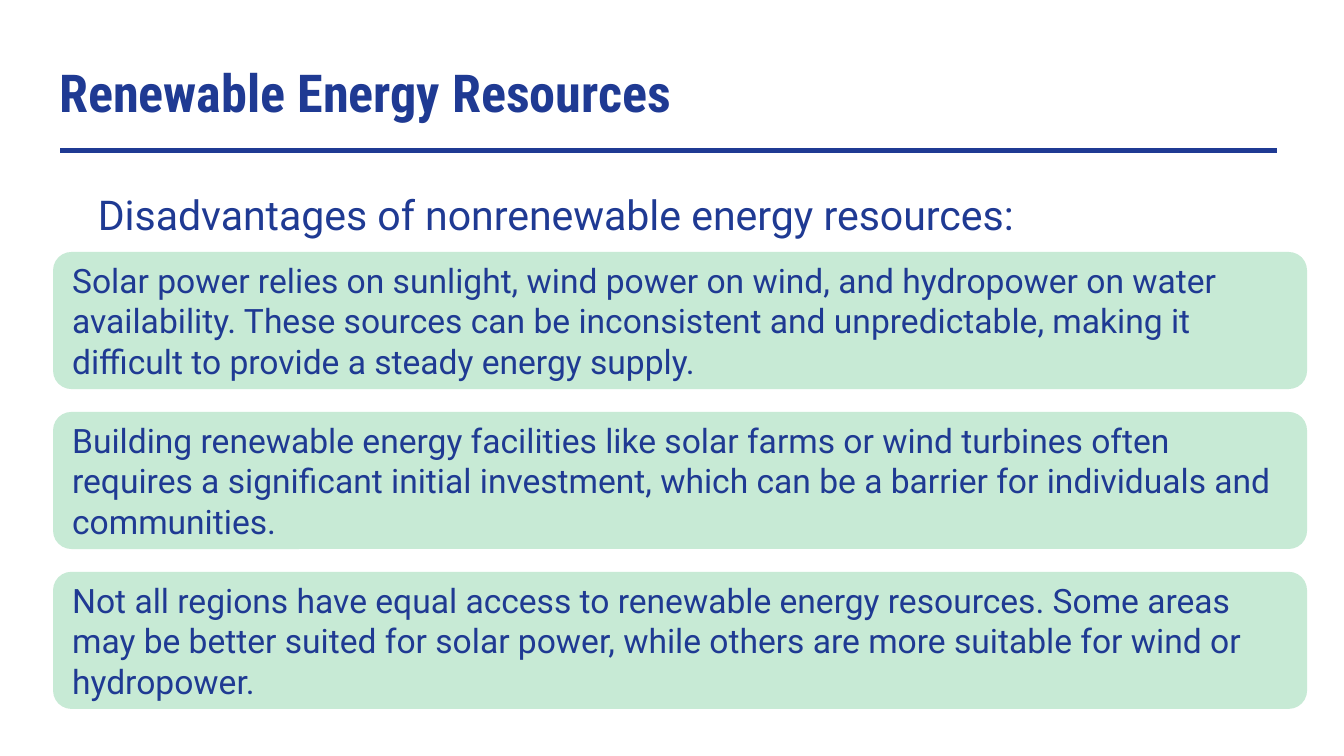
from dataclasses import dataclass

from lxml.etree import SubElement
from pptx import Presentation
from pptx.dml.color import RGBColor
from pptx.enum.shapes import MSO_CONNECTOR, MSO_SHAPE
from pptx.enum.text import MSO_ANCHOR, MSO_AUTO_SIZE, PP_ALIGN
from pptx.oxml.ns import qn
from pptx.shapes.base import BaseShape
from pptx.slide import Slide
from pptx.util import Inches, Pt

NAVY = RGBColor(0x1F, 0x3A, 0x93)
MINT = RGBColor(0xC7, 0xEA, 0xD5)

PAGE_WIDTH = 10
PAGE_HEIGHT = PAGE_WIDTH * 9 / 16

CARD_LEFT, CARD_TOP = 0.4, 1.88
CARD_WIDTH, CARD_HEIGHT = 9.32, 1.01
CARD_STEP = 1.19


@dataclass(frozen=True)
class Disadvantage:
    text: str


DISADVANTAGES = [
    Disadvantage(
        "Solar power relies on sunlight, wind power on wind, and hydropower on water "
        "availability. These sources can be inconsistent and unpredictable, making it "
        "difficult to provide a steady energy supply."
    ),
    Disadvantage(
        "Building renewable energy facilities like solar farms or wind turbines often "
        "requires a significant initial investment, which can be a barrier for "
        "individuals and communities."
    ),
    Disadvantage(
        "Not all regions have equal access to renewable energy resources. Some areas "
        "may be better suited for solar power, while others are more suitable for "
        "wind or hydropower."
    ),
]


def write_text(
    box: BaseShape,
    text: str,
    *,
    size: float,
    font: str = "Roboto",
    bold: bool = False,
    anchor: MSO_ANCHOR = MSO_ANCHOR.TOP,
    auto_size: MSO_AUTO_SIZE = MSO_AUTO_SIZE.NONE,
) -> None:
    frame = box.text_frame
    frame.word_wrap = True
    frame.auto_size = auto_size
    frame.vertical_anchor = anchor
    frame.margin_left = frame.margin_right = Inches(0.1)
    frame.margin_top = frame.margin_bottom = Inches(0.1)
    para = frame.paragraphs[0]
    para.alignment = PP_ALIGN.LEFT
    span = para.add_run()
    span.text = text
    span.font.name = font
    span.font.size = Pt(size)
    span.font.bold = bold
    span.font.color.rgb = NAVY


def add_title(page: Slide) -> None:
    title = page.shapes.title
    title.left, title.top = Inches(0.34), Inches(0.35)
    title.width, title.height = Inches(9.32), Inches(0.63)
    write_text(title, "Renewable Energy Resources", size=28,
               font="Roboto Condensed", bold=True)


def add_rule(page: Slide) -> None:
    rule = page.shapes.add_connector(
        MSO_CONNECTOR.STRAIGHT, Inches(0.45), Inches(1.12), Inches(9.5), Inches(1.12)
    )
    rule.line.color.rgb = NAVY
    rule.line.width = Pt(2.25)
    SubElement(rule._element.spPr, qn("a:effectLst"))


def add_subtitle(page: Slide) -> None:
    box = page.shapes.add_textbox(
        Inches(0.63), Inches(1.31), Inches(8.87), Inches(0.57)
    )
    write_text(box, "Disadvantages of nonrenewable energy resources:", size=22,
               auto_size=MSO_AUTO_SIZE.SHAPE_TO_FIT_TEXT)


def add_card(page: Slide, disadvantage: Disadvantage, top: float) -> None:
    card = page.shapes.add_shape(
        MSO_SHAPE.ROUNDED_RECTANGLE,
        Inches(CARD_LEFT), Inches(top), Inches(CARD_WIDTH), Inches(CARD_HEIGHT),
    )
    card.adjustments[0] = 0.13
    card.shadow.inherit = False
    card.fill.solid()
    card.fill.fore_color.rgb = MINT
    card.line.color.rgb = MINT
    card.line.width = Pt(0.75)
    write_text(card, disadvantage.text, size=18, anchor=MSO_ANCHOR.MIDDLE)


def main() -> None:
    deck = Presentation()
    deck.slide_width, deck.slide_height = Inches(PAGE_WIDTH), Inches(PAGE_HEIGHT)
    page = deck.slides.add_slide(deck.slide_layouts.get_by_name("Title Only"))
    add_title(page)
    add_rule(page)
    add_subtitle(page)
    for index, disadvantage in enumerate(DISADVANTAGES):
        add_card(page, disadvantage, CARD_TOP + index * CARD_STEP)
    deck.save("out.pptx")


if __name__ == "__main__":
    main()
